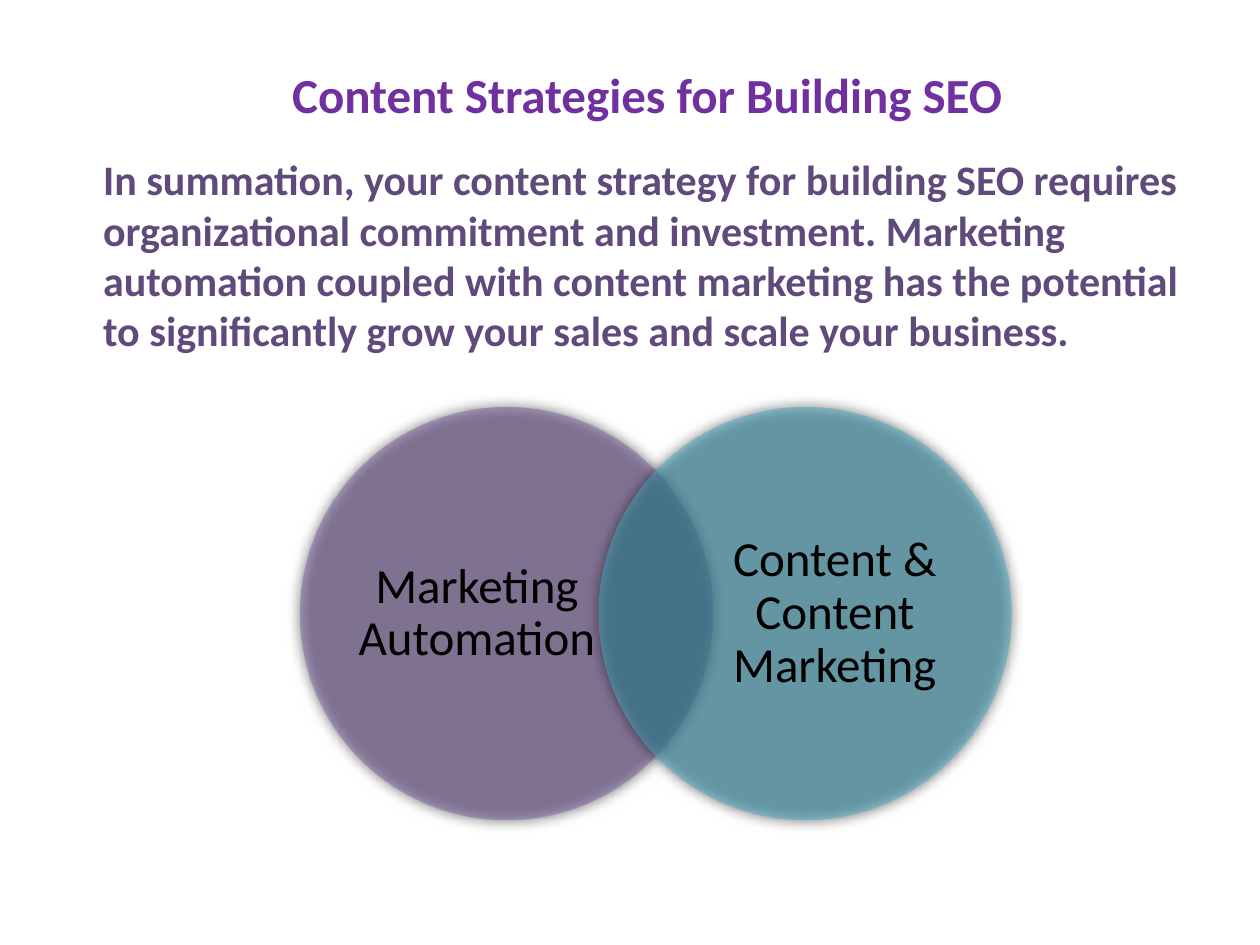
from dataclasses import dataclass

from lxml import etree
from pptx import Presentation
from pptx.dml.color import RGBColor
from pptx.enum.shapes import MSO_SHAPE
from pptx.enum.text import MSO_ANCHOR, MSO_AUTO_SIZE, PP_ALIGN
from pptx.oxml.ns import qn
from pptx.util import Inches, Pt

CENTER, LEFT = PP_ALIGN.CENTER, PP_ALIGN.LEFT
TOP, MIDDLE = MSO_ANCHOR.TOP, MSO_ANCHOR.MIDDLE
OVAL = MSO_SHAPE.OVAL
FIT_TEXT, NO_FIT = MSO_AUTO_SIZE.SHAPE_TO_FIT_TEXT, MSO_AUTO_SIZE.NONE


@dataclass(frozen=True)
class Theme:
    font: str = "Calibri"
    title: str = "7030A0"
    summary: str = "604A7B"
    label: str = "000000"
    automation: str = "8064A2"
    content: str = "4BACC6"
    shadow: str = "000000"
    large: int = 28
    body: int = 24


theme = Theme()


def add_text(parent, box, text, size, color, bold=False, align=LEFT, anchor=TOP, fit=FIT_TEXT):
    """Add a one-paragraph text box and return its text frame."""
    frame = parent.add_textbox(*map(Inches, box)).text_frame
    frame.word_wrap = True
    frame.auto_size = fit
    frame.vertical_anchor = anchor
    paragraph = frame.paragraphs[0]
    paragraph.text = text
    paragraph.alignment = align
    font = paragraph.font
    font.name, font.size, font.bold = theme.font, Pt(size), bold
    font.color.rgb = RGBColor.from_string(color)
    return frame


def add_half_alpha(color_element):
    etree.SubElement(color_element, qn("a:alpha"), val="50000")


prs = Presentation()
prs.slide_width, prs.slide_height = Inches(10), Inches(7.5)
slide = prs.slides.add_slide(prs.slide_layouts[6])

# Summary
add_text(
    slide.shapes, (0.72, 1.17, 8.83, 1.72),
    "In summation, your content strategy for building SEO requires organizational "
    "commitment and investment. Marketing automation coupled with content marketing "
    "has the potential to significantly grow your sales and scale your business.",
    theme.body, theme.summary, bold=True)

# Venn diagram: two overlapping circles, labels set clear of the overlap
diameter, venn_left, venn_top = 3.28, 2.38, 3.23
circle_step = 2.37
label_width, label_height = 1.89, 2.51
label_top = venn_top + (diameter - label_height) / 2
outer_margin = 0.46
venn = slide.shapes.add_group_shape().shapes
circles = [
    ("Marketing Automation", theme.automation, outer_margin),
    ("Content & Content Marketing", theme.content, diameter - label_width - outer_margin),
]
for index, (label, color, label_inset) in enumerate(circles):
    left = venn_left + index * circle_step
    circle = venn.add_shape(OVAL, *map(Inches, (left, venn_top, diameter, diameter)))
    circle.fill.solid()
    circle.fill.fore_color.rgb = RGBColor.from_string(color)
    circle.line.fill.background()
    circle.shadow.inherit = False

    # Translucent fill and soft shadow
    properties = circle._element.spPr
    add_half_alpha(properties.find(qn("a:solidFill")).find(qn("a:srgbClr")))
    soft_shadow = etree.SubElement(
        properties.find(qn("a:effectLst")), qn("a:outerShdw"),
        blurRad=str(Pt(7.5)), dist="0", dir="0", rotWithShape="0")
    add_half_alpha(etree.SubElement(soft_shadow, qn("a:srgbClr"), val=theme.shadow))

    frame = add_text(
        venn, (left + label_inset, label_top, label_width, label_height), label,
        theme.large, theme.label, align=CENTER, anchor=MIDDLE, fit=NO_FIT)
    frame.margin_left = frame.margin_right = frame.margin_top = frame.margin_bottom = 0
    frame.paragraphs[0].line_spacing = 0.9

# Title
add_text(
    slide.shapes, (1.3, 0.46, 7.67, 0.98), "Content Strategies for Building SEO",
    theme.large, theme.title, bold=True, align=CENTER)

prs.save("out.pptx")
